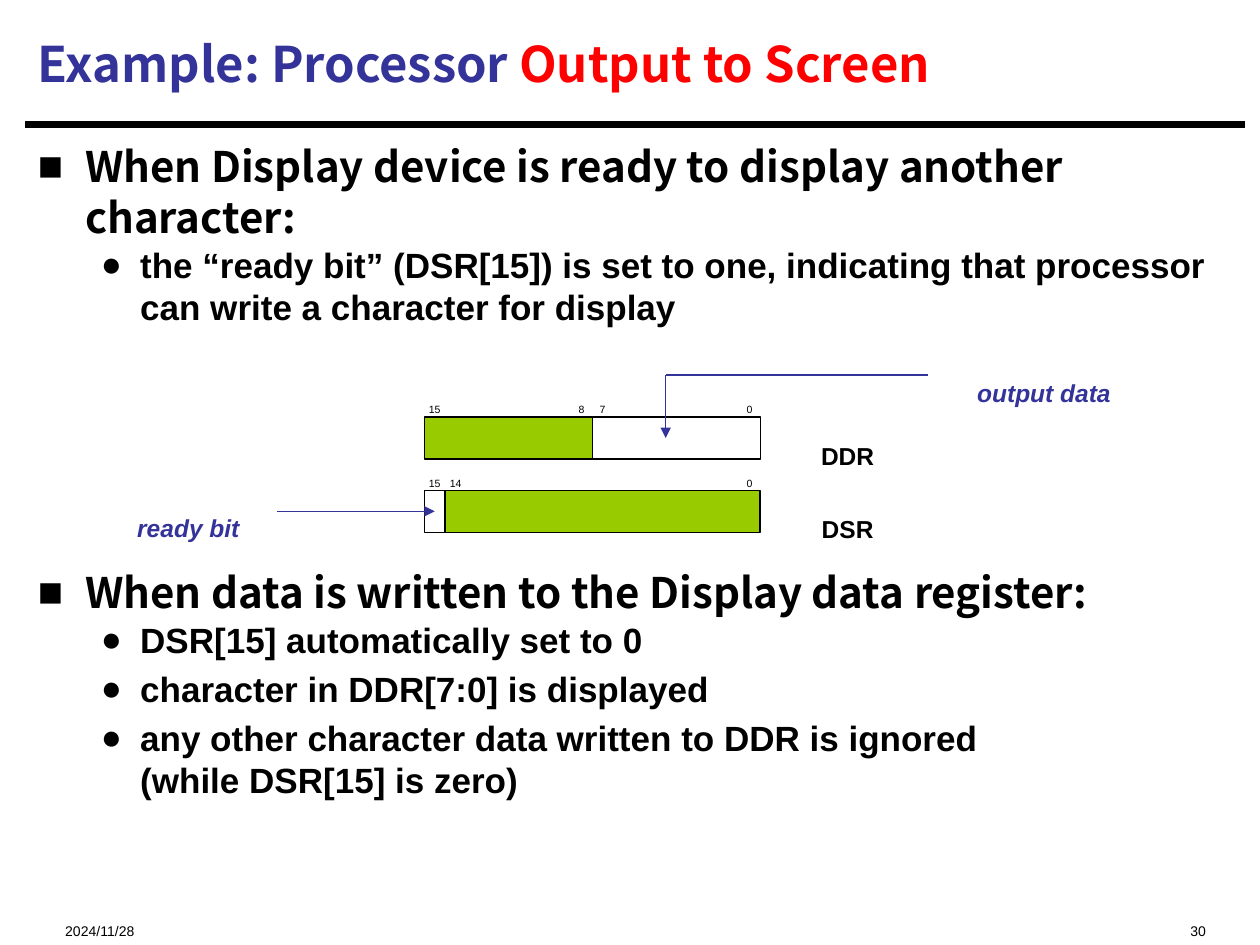
import pptx
import pptx.util
import pptx.dml.color
import pptx.enum.shapes
import pptx.enum.text
import pptx.oxml.ns
import lxml.etree

Pt = pptx.util.Pt
ALIGN = pptx.enum.text.PP_ALIGN
ANCHOR = pptx.enum.text.MSO_ANCHOR

COLORS = {"ink": "000000", "accent": "333399", "alert": "FF0000",
          "unused": "99CC00", "used": "FFFFFF"}
HEADING_FONT, TEXT_FONT = "Noto Sans CJK SC", "Arial"
BIT_WIDTH, REGISTER_HEIGHT = 12, 24


def rgb(name):
    return pptx.dml.color.RGBColor.from_string(COLORS[name])


def style(font, face, size, color, bold=False, italic=False):
    font.name, font.size = face, Pt(size)
    font.bold, font.italic = bold, italic
    font.color.rgb = rgb(color)


def place(shape, box):
    shape.left, shape.top, shape.width, shape.height = map(Pt, box)


def add_child(parent, tag, **attributes):
    return lxml.etree.SubElement(parent, pptx.oxml.ns.qn(tag), attributes)


def add_line(slide, start, end, color, weight, arrow=False):
    line = slide.shapes.add_connector(
        pptx.enum.shapes.MSO_CONNECTOR.STRAIGHT, *map(Pt, start + end))
    line.line.color.rgb = rgb(color)
    line.line.width = Pt(weight)
    if arrow:
        add_child(line.line._get_or_add_ln(), "a:tailEnd", type="triangle")
    add_child(line._element.spPr, "a:effectLst")


def add_label(slide, box, text, size, color="ink", bold=False, italic=False,
              align=ALIGN.CENTER, side=0, bottom=0):
    label = slide.shapes.add_textbox(*map(Pt, box))
    frame = label.text_frame
    frame.word_wrap = False
    frame.vertical_anchor = ANCHOR.BOTTOM
    frame.margin_left = frame.margin_right = Pt(side)
    frame.margin_top, frame.margin_bottom = Pt(0), Pt(bottom)
    paragraph = frame.paragraphs[0]
    paragraph.text = text
    paragraph.alignment = align
    style(paragraph.font, TEXT_FONT, size, color, bold, italic)


def fill_title(slide, box):
    title = slide.shapes.title
    place(title, box)
    title.text_frame.vertical_anchor = ANCHOR.MIDDLE
    paragraph = title.text_frame.paragraphs[0]
    paragraph.alignment = ALIGN.LEFT
    for text, color in (("Example: Processor ", "accent"),
                        ("Output to Screen", "alert")):
        run = paragraph.add_run()
        run.text = text
        style(run.font, HEADING_FONT, 28, color, bold=True)


def fill_body(slide, box):
    levels = (
        {"face": HEADING_FONT, "size": 24, "line": 28.7, "bullet": "■",
         "indent": 27, "hanging": 27},
        {"face": TEXT_FONT, "size": 20, "line": 24, "bullet": "●",
         "indent": 58.5, "hanging": 22.5},
    )
    points = (
        (0, 3.3, "When Display device is ready to display another character:"),
        (1, 1.2, "the “ready bit” (DSR[15]) is set to one, indicating that "
                 "processor can write a character for display"),
        (0, 136.8, "When data is written to the Display data register:"),
        (1, 1, "DSR[15] automatically set to 0"),
        (1, 4, "character in DDR[7:0] is displayed"),
        (1, 4, "any other character data written to DDR is ignored\v"
               "(while DSR[15] is zero)"),
    )
    body = slide.placeholders[1]
    place(body, box)
    frame = body.text_frame
    frame.auto_size = pptx.enum.text.MSO_AUTO_SIZE.NONE
    frame.vertical_anchor = ANCHOR.TOP
    for index, (depth, before, text) in enumerate(points):
        level = levels[depth]
        paragraph = frame.add_paragraph() if index else frame.paragraphs[0]
        paragraph.text = text
        paragraph.level = depth
        paragraph.space_before = Pt(before)
        paragraph.line_spacing = Pt(level["line"])
        properties = paragraph._p.get_or_add_pPr()
        properties.set("marL", str(Pt(level["indent"])))
        properties.set("indent", str(-Pt(level["hanging"])))
        add_child(properties, "a:buFont", typeface=TEXT_FONT)
        add_child(properties, "a:buChar", char=level["bullet"])
        style(paragraph.font, level["face"], level["size"], "ink", bold=True)


def draw_register(slide, left, top, name, fields):
    for high, low, color in fields:
        field = slide.shapes.add_shape(
            pptx.enum.shapes.MSO_SHAPE.RECTANGLE,
            Pt(left + (15 - high) * BIT_WIDTH), Pt(top),
            Pt((high - low + 1) * BIT_WIDTH), Pt(REGISTER_HEIGHT))
        field.shadow.inherit = False
        field.fill.solid()
        field.fill.fore_color.rgb = rgb(color)
        field.line.color.rgb = rgb("ink")
        field.line.width = Pt(0.75)
        for bit in sorted({high, low}, reverse=True):
            center = left + (15.5 - bit) * BIT_WIDTH
            add_label(slide, (center - 12.5, top - 18, 25, 19.4), str(bit), 6,
                      bottom=2)
    add_label(slide, (left + 209, top - 5.5, 66, 36), name, 14, bold=True)


def draw_registers(slide, left, top):
    second_top = top + 41.9
    draw_register(slide, left, top, "DDR",
                  ((15, 8, "unused"), (7, 0, "used")))
    draw_register(slide, left, second_top, "DSR",
                  ((15, 15, "used"), (14, 0, "unused")))

    data_x, data_y = left + 138, top - 24
    add_label(slide, (left + 281.8, top - 41.5, 144.7, 36), "output data", 14,
              "accent", bold=True, italic=True)
    add_line(slide, (left + 288, data_y), (data_x, data_y), "accent", 0.75)
    add_line(slide, (data_x, data_y), (data_x, top + 12), "accent", 0.75, True)

    ready_y = second_top + REGISTER_HEIGHT / 2
    add_label(slide, (left - 192, ready_y - 18, 114.5, 36), "ready bit", 14,
              "accent", bold=True, italic=True)
    add_line(slide, (left - 84, ready_y), (left + BIT_WIDTH / 2, ready_y),
             "accent", 0.75, True)


def draw_footer(slide, left, top, width, height):
    add_label(slide, (left, top, 180, height), "2024/11/28", 8,
              align=ALIGN.LEFT, side=7.2)
    add_label(slide, (left + width - 216, top, 216, height), "30", 8,
              align=ALIGN.RIGHT, side=7.2)


def main():
    deck = pptx.Presentation()
    deck.slide_width, deck.slide_height = Pt(720), Pt(540)
    slide = deck.slides.add_slide(deck.slide_layouts[1])
    add_line(slide, (14.4, 71.3), (711.4, 71.3), "ink", 3.75)
    fill_title(slide, (14.4, 5.8, 696.2, 60.5))
    fill_body(slide, (14.4, 77, 696.2, 431.3))
    draw_registers(slide, 242.4, 238.3)
    draw_footer(slide, 30.2, 514.8, 666, 22)
    deck.save("out.pptx")


if __name__ == "__main__":
    main()
